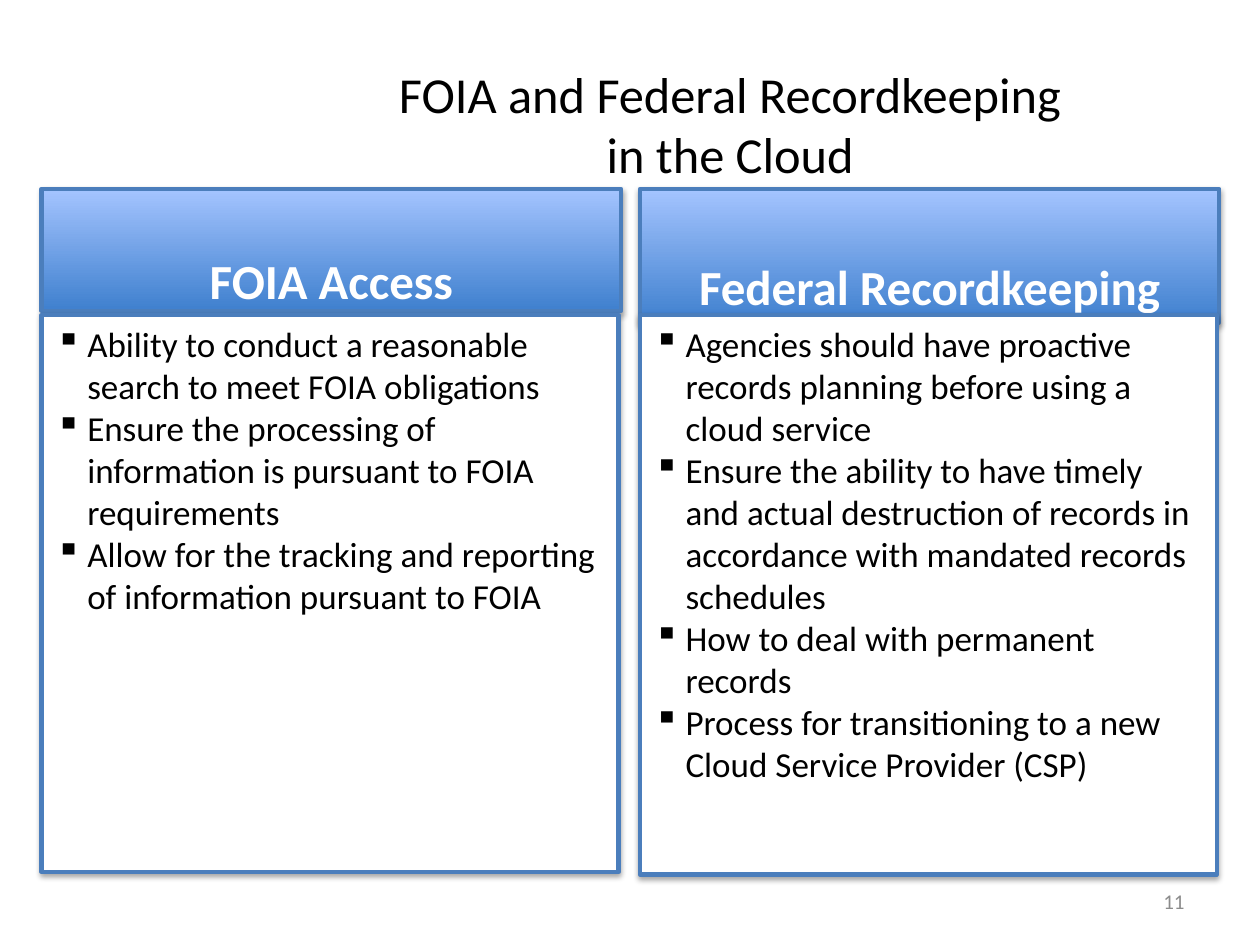
from pptx import Presentation
from pptx.dml.color import RGBColor
from pptx.enum.shapes import MSO_SHAPE
from pptx.enum.text import MSO_ANCHOR, MSO_AUTO_SIZE, PP_ALIGN
from pptx.oxml import parse_xml
from pptx.oxml.ns import nsdecls
from pptx.util import Cm, Pt

RECTANGLE = MSO_SHAPE.RECTANGLE
TOP, MIDDLE, BOTTOM = MSO_ANCHOR.TOP, MSO_ANCHOR.MIDDLE, MSO_ANCHOR.BOTTOM
LEFT, CENTER, RIGHT = PP_ALIGN.LEFT, PP_ALIGN.CENTER, PP_ALIGN.RIGHT

BLACK = RGBColor(0x00, 0x00, 0x00)
WHITE = RGBColor(0xFF, 0xFF, 0xFF)
GREY = RGBColor(0x8C, 0x8C, 0x8C)
BORDER_BLUE = RGBColor(0x4B, 0x7E, 0xBC)
DEEP_BLUE = RGBColor(0x3F, 0x80, 0xCE)
PALE_BLUE = RGBColor(0xA4, 0xC4, 0xFF)

FONT = "Calibri"
LINE_SPACING = 1.22
HEADING_SIZE = 28
COLUMN_TOP, BODY_TOP = 3.81, 6.35
HEADING_WIDTH, BODY_WIDTH = 11.68, 11.63

# Left, heading height, body height, heading, points
COLUMNS = [
    (0.84, 2.46, 11.23, "FOIA Access", [
        "Ability to conduct a reasonable search to meet FOIA obligations",
        "Ensure the processing of information is pursuant to FOIA requirements",
        "Allow for the tracking and reporting of information pursuant to FOIA",
    ]),
    (12.9, 2.69, 11.28, "Federal Recordkeeping", [
        "Agencies should have proactive records planning before using a cloud service",
        "Ensure the ability to have timely and actual destruction of records in "
        "accordance with mandated records schedules",
        "How to deal with permanent records",
        "Process for transitioning to a new Cloud Service Provider (CSP)",
    ]),
]


class SlideBuilder:
    def __init__(self, slide, font):
        self.slide = slide
        self.font = font

    def set_text(self, frame, text, size, color, align, anchor, bold=False):
        frame.text = text
        frame.word_wrap = True
        frame.auto_size = MSO_AUTO_SIZE.NONE
        frame.vertical_anchor = anchor
        for paragraph in frame.paragraphs:
            paragraph.alignment = align
            for run in paragraph.runs:
                run.font.name = self.font
                run.font.size = Pt(size)
                run.font.bold = bold
                run.font.color.rgb = color

    def title(self, text, left, top, width, height):
        title = self.slide.shapes.title
        title.left, title.top = Cm(left), Cm(top)
        title.width, title.height = Cm(width), Cm(height)
        self.set_text(title.text_frame, text, 28.8, BLACK, CENTER, MIDDLE)

    def panel(self, left, top, width, height):
        """Add a blue-bordered rectangle with a soft shadow below it."""
        panel = self.slide.shapes.add_shape(
            RECTANGLE, Cm(left), Cm(top), Cm(width), Cm(height))
        panel.line.color.rgb = BORDER_BLUE
        panel.line.width = Pt(2.5)
        panel.shadow.inherit = False
        effects = panel._element.spPr.find(
            "{http://schemas.openxmlformats.org/drawingml/2006/main}effectLst")
        effects.append(parse_xml(
            f'<a:outerShdw {nsdecls("a")} blurRad="{Pt(3.1)}" dist="{Pt(1.8)}" '
            'dir="5400000" rotWithShape="0"><a:srgbClr val="000000">'
            '<a:alpha val="35000"/></a:srgbClr></a:outerShdw>'))
        frame = panel.text_frame
        frame.margin_left = frame.margin_right = Cm(0.28)
        frame.margin_top = frame.margin_bottom = Cm(0.15)
        return panel

    def heading(self, text, left, top, width, height):
        """Add a gradient panel whose text hangs one line below its middle."""
        panel = self.panel(left, top, width, height)
        panel.fill.gradient()
        panel.fill.gradient_angle = 90
        for stop, color in zip(panel.fill.gradient_stops, (DEEP_BLUE, PALE_BLUE)):
            stop.color.rgb = color
        frame = panel.text_frame
        self.set_text(frame, text, HEADING_SIZE, WHITE, CENTER, BOTTOM, bold=True)
        frame.margin_bottom = Cm(height / 2) - Pt(HEADING_SIZE * LINE_SPACING)

    def bullet_panel(self, points, left, top, width, height):
        panel = self.panel(left, top, width, height)
        panel.fill.solid()
        panel.fill.fore_color.rgb = WHITE
        frame = panel.text_frame
        self.set_text(frame, "\n".join(points), 20, BLACK, LEFT, TOP)
        for paragraph in frame.paragraphs:
            properties = paragraph._p.get_or_add_pPr()
            properties.set("marL", str(Cm(0.64)))
            properties.set("indent", str(-Cm(0.64)))
            properties.append(parse_xml(f'<a:buChar {nsdecls("a")} char="▪"/>'))

    def page_number(self, text, left, top, width, height):
        box = self.slide.shapes.add_textbox(
            Cm(left), Cm(top), Cm(width), Cm(height))
        self.set_text(box.text_frame, text, 12, GREY, RIGHT, MIDDLE)


def main():
    presentation = Presentation()
    presentation.slide_width, presentation.slide_height = Cm(25.4), Cm(19.05)
    title_only = presentation.slide_layouts[5]
    builder = SlideBuilder(presentation.slides.add_slide(title_only), FONT)

    builder.title("FOIA and Federal Recordkeeping\vin the Cloud",
                  4.04, 1.37, 21.36, 2.24)
    for left, heading_height, body_height, heading, points in COLUMNS:
        builder.heading(heading, left, COLUMN_TOP, HEADING_WIDTH, heading_height)
        builder.bullet_panel(points, left, BODY_TOP, BODY_WIDTH, body_height)
    builder.page_number("11", 18.21, 17.65, 5.92, 1.02)

    presentation.save("out.pptx")


if __name__ == "__main__":
    main()
